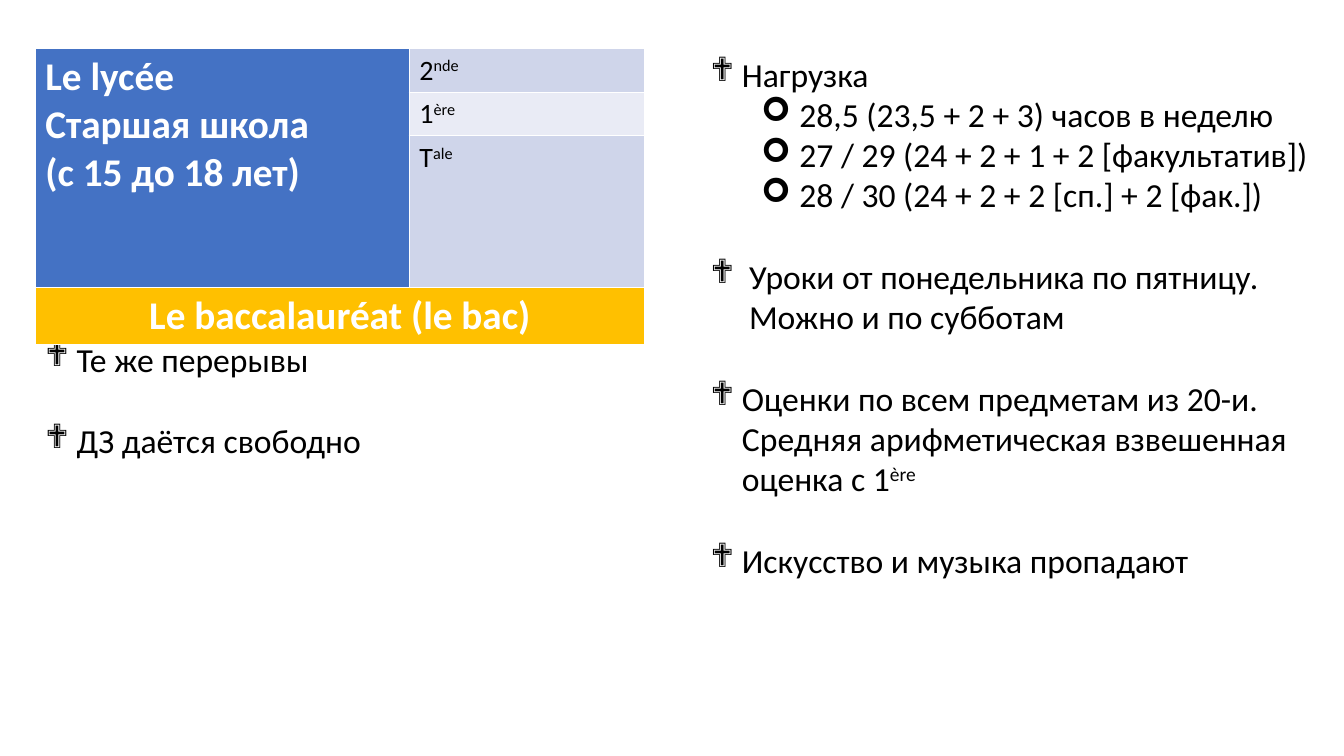
from lxml import etree
from pptx import Presentation
from pptx.dml.color import RGBColor
from pptx.enum.text import MSO_ANCHOR, MSO_AUTO_SIZE, PP_ALIGN
from pptx.oxml.ns import qn
from pptx.util import Inches, Pt

TOP = MSO_ANCHOR.TOP
GROW = MSO_AUTO_SIZE.SHAPE_TO_FIT_TEXT
CENTER = PP_ALIGN.CENTER
TWO_CONTENT = 3

COLORS = {"text": "000000", "white": "FFFFFF", "school": "4472C4",
          "band": "CFD5EA", "light_band": "E9EBF5", "exam": "FFC000"}
DIAMOND, ARROW = "❖", "➢"
BLANK_LINE = 29.3  # height in points of one line of 24 pt text


class SlideBuilder:
    """Holds the style and the current slide; lengths are percent of the slide."""
    font = "Calibri"
    list_size = 24

    def __init__(self, presentation):
        self.width = presentation.slide_width
        self.height = presentation.slide_height
        self.slide = presentation.slides.add_slide(
            presentation.slide_layouts[TWO_CONTENT])
        title = self.slide.shapes.title
        title.element.getparent().remove(title.element)

    def across(self, percent):
        return round(self.width * percent / 100)

    def down(self, percent):
        return round(self.height * percent / 100)

    def set_text(self, paragraph, text, size, color="text", bold=False):
        """Fill a paragraph; whatever follows a ^ is superscript."""
        base, _, superscript = text.partition("^")
        paragraph.add_run().text = base
        if superscript:
            run = paragraph.add_run()
            run.text = superscript
            run._r.get_or_add_rPr().set("baseline", "30000")
        font = paragraph.font
        font.name, font.size, font.bold = self.font, Pt(size), bold
        font.color.rgb = RGBColor.from_string(COLORS[color])

    def bullet(self, paragraph, symbol, indent, hanging):
        properties = paragraph._p.get_or_add_pPr()
        properties.set("marL", str(Inches(indent)))
        properties.set("indent", str(-Inches(hanging)))
        etree.SubElement(properties, qn("a:buFont"), typeface="Wingdings")
        etree.SubElement(properties, qn("a:buChar"), char=symbol)

    def bullet_list(self, index, left, top, width, height, items):
        shape = self.slide.placeholders[index]
        shape.left, shape.top = self.across(left), self.down(top)
        shape.width, shape.height = self.across(width), self.down(height)
        frame = shape.text_frame
        frame.word_wrap, frame.auto_size = True, GROW
        frame.vertical_anchor = TOP
        for number, (text, level, indent, hanging, gap) in enumerate(items):
            paragraph = frame.add_paragraph() if number else frame.paragraphs[0]
            paragraph.level = level
            self.bullet(paragraph, ARROW if level else DIAMOND, indent, hanging)
            paragraph.space_before = Pt(gap)
            paragraph.space_after = Pt(0)
            paragraph.line_spacing = 1.0
            self.set_text(paragraph, text, self.list_size)

    def table(self, left, top, columns, row_height, row_count):
        table = self.slide.shapes.add_table(
            row_count, len(columns), self.across(left), self.down(top),
            self.across(sum(columns)), self.down(row_height * row_count)).table
        table.first_row = table.horz_banding = False
        for column, width in zip(table.columns, columns):
            column.width = self.across(width)
        for cell in table.iter_cells():
            self.borders(cell)
        return table

    def borders(self, cell):
        properties = cell._tc.get_or_add_tcPr()
        for side in ("lnL", "lnR", "lnT", "lnB"):
            line = etree.SubElement(properties, qn(f"a:{side}"), w=str(Pt(1)))
            fill = etree.SubElement(line, qn("a:solidFill"))
            etree.SubElement(fill, qn("a:srgbClr"), val=COLORS["white"])

    def fill_cell(self, cell, fill, lines, size, color="text", bold=False,
                  alignment=None):
        cell.fill.solid()
        cell.fill.fore_color.rgb = RGBColor.from_string(COLORS[fill])
        frame = cell.text_frame
        for number, text in enumerate(lines):
            paragraph = frame.add_paragraph() if number else frame.paragraphs[0]
            paragraph.alignment = alignment
            self.set_text(paragraph, text, size, color, bold)


def main():
    presentation = Presentation()
    presentation.slide_width = Inches(13.33)
    presentation.slide_height = Inches(7.5)
    builder = SlideBuilder(presentation)

    table = builder.table(2.63, 6.4, (27.83, 17.48), 5.47, 4)
    table.cell(0, 0).merge(table.cell(2, 0))
    table.cell(3, 0).merge(table.cell(3, 1))
    builder.fill_cell(table.cell(0, 0), "school",
                      ("Le lycée", "Старшая школа", "(с 15 до 18 лет)"),
                      28, "white", True)
    for row, year in enumerate(("2^nde", "1^ère", "T^ale")):
        builder.fill_cell(table.cell(row, 1),
                          "light_band" if row % 2 else "band", (year,), 20)
    builder.fill_cell(table.cell(3, 0), "exam", ("Le baccalauréat (le bac)",),
                      28, "white", True, CENTER)

    # text, level, indent, hanging, space before
    builder.bullet_list(1, 52.13, 6.4, 45.98, 69.6, (
        ("Нагрузка", 0, 0.31, 0.31, 0),
        ("28,5 (23,5 + 2 + 3) часов в неделю", 1, 0.88, 0.38, 0),
        ("27 / 29 (24 + 2 + 1 + 2 [факультатив])", 1, 0.88, 0.38, 0),
        ("28 / 30 (24 + 2 + 2 [сп.] + 2 [фак.])", 1, 0.88, 0.38, 0),
        ("Уроки от понедельника по пятницу. Можно и по субботам",
         0, 0.38, 0.38, BLANK_LINE),
        ("Оценки по всем предметам из 20-и. Средняя арифметическая "
         "взвешенная оценка с 1^ère", 0, 0.31, 0.31, BLANK_LINE),
        ("Искусство и музыка пропадают", 0, 0.31, 0.31, BLANK_LINE),
    ))
    builder.bullet_list(2, 2.63, 44.13, 43.58, 17.47, (
        ("Те же перерывы", 0, 0.31, 0.31, 0),
        ("ДЗ даётся свободно", 0, 0.31, 0.31, BLANK_LINE),
    ))
    presentation.save("out.pptx")


if __name__ == "__main__":
    main()
